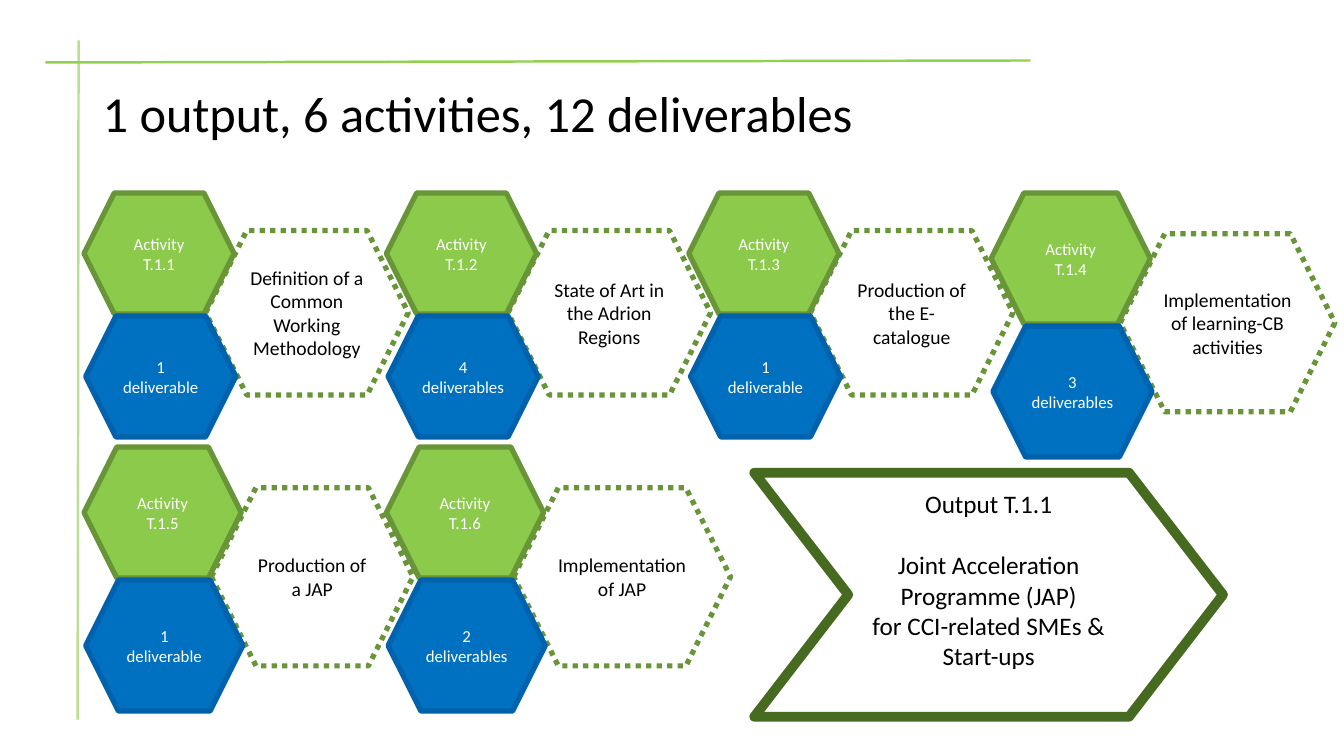
from dataclasses import dataclass

from lxml import etree
from pptx import Presentation
from pptx import util as u
from pptx.dml.color import RGBColor
from pptx.enum import dml, shapes, text
from pptx.oxml import ns

COLOURS = {
    "black": "000000", "white": "FFFFFF",
    "rule": "92D050", "pale_rule": "B9DF93",
    "green": "8BCA4B", "green_edge": "679537",
    "blue": "0070C0", "blue_edge": "0062AC", "output_edge": "466B20",
}
FONT = "Calibri"

# The slide is a grid of 40 columns and 30 rows; all lengths count these
COLUMN = u.Inches(13.33) / 40
ROW = u.Inches(7.5) / 30
FIRST_COLUMN, COLUMN_STEP = 2.5, 9
FIRST_ROW, ROW_STEP = 7.66, 10.08


@dataclass
class Box:
    left: float
    top: float
    width: float
    height: float

    def place(self) -> tuple[int, int, int, int]:
        return (round(self.left * COLUMN), round(self.top * ROW),
                round(self.width * COLUMN), round(self.height * ROW))


@dataclass
class Style:
    size: float
    font: str
    edge: str
    edge_width: float
    fill: str | None = None
    dotted: bool = False


@dataclass
class Activity:
    number: int
    description: str
    deliverables: str
    column: int
    row: int
    badge_width: float = 4.47
    badge_height: float = 4.8
    label_width: float = 6.03


LABEL = Style(14, "black", "green_edge", 3.75, dotted=True)
ACTIVITY = Style(12, "white", "green_edge", 3.75, fill="green")
DELIVERABLE = Style(12, "white", "blue_edge", 3.75, fill="blue")
OUTPUT = Style(18, "black", "output_edge", 7)

ACTIVITIES = [
    Activity(1, "Definition of a Common Working Methodology", "1\ndeliverable", 0, 0),
    Activity(2, "State of Art in the Adrion Regions", "4\ndeliverables", 1, 0),
    Activity(3, "Production of the E-catalogue", "1\ndeliverable", 2, 0),
    Activity(4, "Implementation of learning-CB activities", "3\ndeliverables",
             3, 0, 4.74, 5.2, 6.39),
    Activity(5, "Production of a JAP", "1\ndeliverable", 0, 1, 4.68, 5.2, 6),
    Activity(6, "Implementation of JAP", "2\ndeliverables", 1, 1, 4.68, 5.2, 6.45),
]


def colour(name: str) -> RGBColor:
    return RGBColor.from_string(COLOURS[name])


def write(shape, content: str, size: float, font: str, alignment) -> None:
    frame = shape.text_frame
    frame.word_wrap = True
    frame.vertical_anchor = text.MSO_ANCHOR.MIDDLE
    frame.text = content
    for paragraph in frame.paragraphs:
        paragraph.alignment = alignment
        paragraph.font.name = FONT
        paragraph.font.size = u.Pt(size)
        paragraph.font.color.rgb = colour(font)


def add_rule(slide, start: tuple[float, float], end: tuple[float, float],
             name: str) -> None:
    rule = slide.shapes.add_connector(
        shapes.MSO_CONNECTOR.STRAIGHT,
        round(start[0] * COLUMN), round(start[1] * ROW),
        round(end[0] * COLUMN), round(end[1] * ROW))
    rule.line.color.rgb = colour(name)
    rule.line.width = u.Pt(1.75)
    etree.SubElement(rule._element.spPr, ns.qn("a:effectLst"))


def add_figure(slide, kind, box: Box, content: str, style: Style):
    shape = slide.shapes.add_shape(kind, *box.place())
    shape.shadow.inherit = False
    if style.fill:
        shape.fill.solid()
        shape.fill.fore_color.rgb = colour(style.fill)
    else:
        shape.fill.background()
    shape.line.color.rgb = colour(style.edge)
    shape.line.width = u.Pt(style.edge_width)
    if style.dotted:
        shape.line.dash_style = dml.MSO_LINE.ROUND_DOT
    write(shape, content, style.size, style.font, text.PP_ALIGN.CENTER)
    return shape


def add_activity(slide, activity: Activity) -> None:
    left = FIRST_COLUMN + activity.column * COLUMN_STEP
    top = FIRST_ROW + activity.row * ROW_STEP
    width, height = activity.badge_width, activity.badge_height
    hexagons = [
        (Box(left + 0.81 * width, top + 0.31 * height,
             activity.label_width, 1.36 * height), activity.description, LABEL),
        (Box(left, top, width, height), f"Activity\nT.1.{activity.number}", ACTIVITY),
        (Box(left + 0.05, top + height + 0.08, width, height),
         activity.deliverables, DELIVERABLE),
    ]
    for box, content, style in hexagons:
        add_figure(slide, shapes.MSO_SHAPE.HEXAGON, box, content, style)


def main() -> None:
    presentation = Presentation()
    presentation.slide_width = u.Inches(13.33)
    presentation.slide_height = u.Inches(7.5)
    slide = presentation.slides.add_slide(presentation.slide_layouts[6])

    # Corner rules
    add_rule(slide, (2.34, 1.6), (2.31, 28.56), "pale_rule")
    add_rule(slide, (1.35, 2.48), (30.67, 2.4), "rule")

    # Title
    title = slide.shapes.add_textbox(*Box(2.76, 1.72, 34.5, 5.8).place())
    write(title, "1 output, 6 activities, 12 deliverables", 36, "black",
          text.PP_ALIGN.LEFT)
    title.text_frame.paragraphs[0].line_spacing = 0.9

    # Activities with their deliverables
    for activity in ACTIVITIES:
        add_activity(slide, activity)

    # Output arrow
    output = add_figure(
        slide, shapes.MSO_SHAPE.CHEVRON, Box(22.45, 18.76, 13.95, 9.68),
        "Output T.1.1\nJoint Acceleration Programme (JAP)\n"
        "for CCI-related SMEs & Start-ups", OUTPUT)
    output.adjustments[0] = 0.385
    output.text_frame.margin_bottom = round(1.4 * ROW)
    output.text_frame.paragraphs[1].space_before = u.Pt(22)

    presentation.save("out.pptx")


if __name__ == "__main__":
    main()
